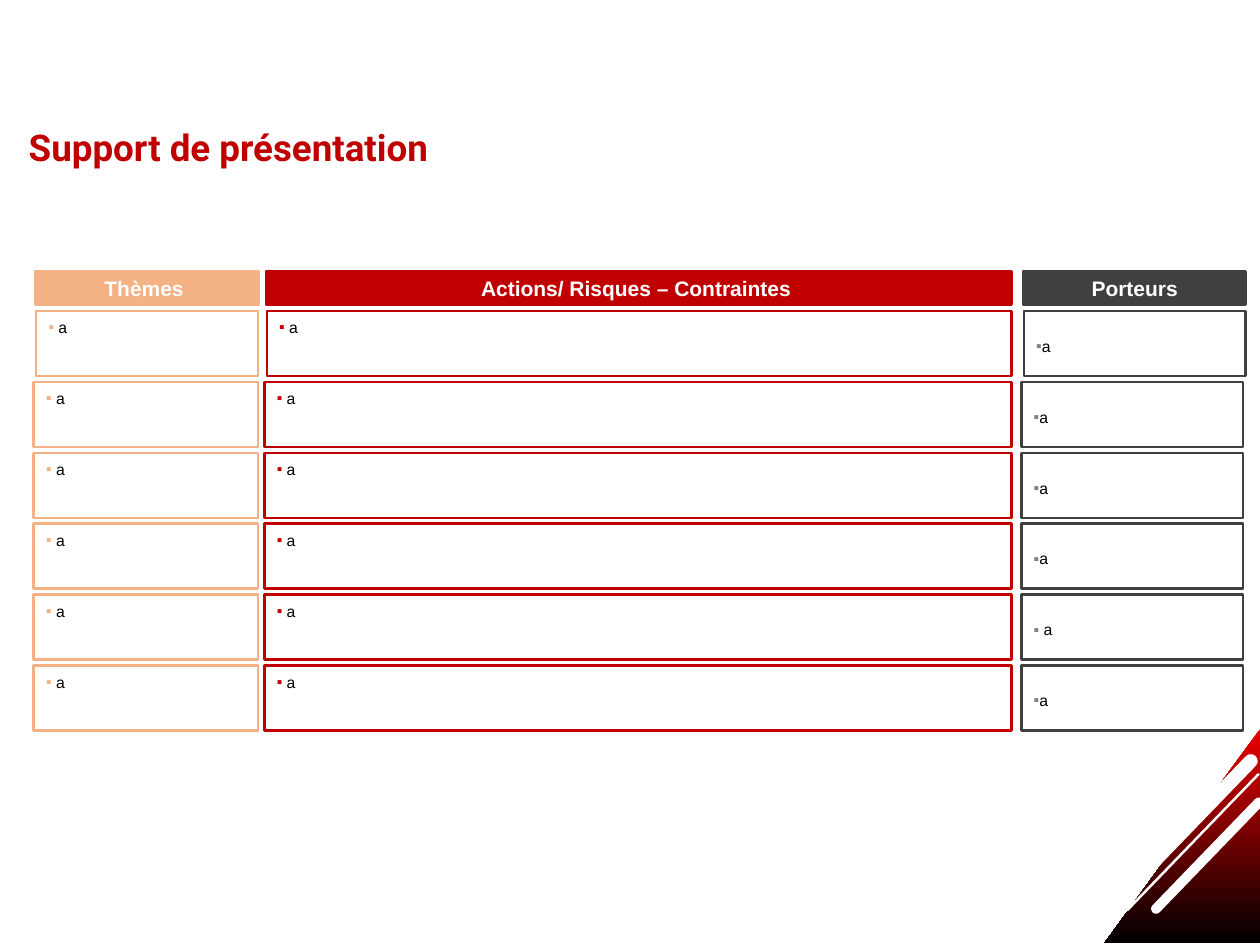
"""Build the action tracking slide with its three columns and corner decoration."""
from lxml.etree import SubElement
from pptx import Presentation
from pptx.dml.color import RGBColor
from pptx.enum.shapes import MSO_SHAPE as Preset
from pptx.enum.text import MSO_ANCHOR as Anchor, PP_ALIGN as Align
from pptx.oxml.ns import qn
from pptx.util import Cm, Pt


def color(value):
    return RGBColor.from_string(value)


def add_box(left, top, width, height, fill, line, line_width):
    shape = slide.shapes.add_shape(
        Preset.ROUNDED_RECTANGLE, Cm(left), Cm(top), Cm(width), Cm(height))
    shape.adjustments[0] = 0
    shape.shadow.inherit = False
    shape.fill.solid()
    shape.fill.fore_color.rgb = color(fill)
    shape.line.color.rgb = color(line)
    shape.line.width = Pt(line_width)
    SubElement(shape._element.spPr.find(qn("a:ln")), qn("a:round"))
    shape.text_frame.word_wrap = True
    return shape


presentation = Presentation()
presentation.slide_width, presentation.slide_height = Cm(25.4), Cm(19.05)
slide = presentation.slides.add_slide(presentation.slide_layouts[6])

decoration = slide.shapes.add_group_shape()
triangle = decoration.shapes.add_shape(
    Preset.RIGHT_TRIANGLE, Cm(22.26), Cm(14.7), Cm(3.14), Cm(4.32))
triangle.shadow.inherit = False
triangle._element.spPr.find(qn("a:xfrm")).set("flipH", "1")
triangle.fill.gradient()
triangle.fill.gradient_angle = 270
for position, value in enumerate(("EA0000", "000000")):
    stop = triangle.fill.gradient_stops[position]
    stop.color.rgb = color(value)
    stop.position = position
triangle.line.fill.background()

stripes = [(21.5, 16.72, 4.5, 0.28), (22.75, 17.15, 3.18, 0.2), (22.13, 16.95, 3.84, 0.05)]
for left, top, width, height in stripes:
    stripe = decoration.shapes.add_shape(
        Preset.ROUNDED_RECTANGLE, Cm(left), Cm(top), Cm(width), Cm(height))
    stripe.adjustments[0] = 0.5
    stripe.rotation = 314
    stripe.shadow.inherit = False
    stripe.fill.solid()
    stripe.fill.fore_color.rgb = color("FFFFFF")
    stripe.line.fill.background()

columns = [
    ("Thèmes ", 0.73, 4.47, "F4B183", "F4B183", Anchor.TOP, 0.05),
    ("Actions/ Risques – Contraintes ", 5.38, 15.01, "C00000", "C00000", Anchor.TOP, 0.05),
    ("Porteurs", 20.64, 4.47, "404040", "808080", Anchor.MIDDLE, 0),
]
row_count, first_top, row_pitch, row_height = 6, 6.27, 1.43, 1.31
shift = 0.05
for heading, left, width, accent, bullet_color, anchor, widening in columns:
    header = add_box(left, 5.47, width, 0.67, accent, accent, 2)
    header.text_frame.vertical_anchor = Anchor.MIDDLE
    paragraph = header.text_frame.paragraphs[0]
    paragraph.alignment = Align.CENTER
    run = paragraph.add_run()
    run.text = heading
    run.font.name, run.font.size, run.font.bold = "Arial", Pt(12), True
    run.font.color.rgb = color("FFFFFF")

    for row in range(row_count):
        offset, extra = (shift, widening) if row else (0, 0)
        cell = add_box(left - offset, first_top + row * row_pitch, width + extra,
                       row_height, "FFFFFF", accent, 1.5)
        cell.text_frame.vertical_anchor = anchor
        cell.text_frame.margin_top = Cm(0.22 if anchor == Anchor.MIDDLE else 0.14)
        paragraph = cell.text_frame.paragraphs[0]
        paragraph.alignment = Align.LEFT
        properties = paragraph._p.get_or_add_pPr()
        bullet_fill = SubElement(properties, qn("a:buClr"))
        SubElement(bullet_fill, qn("a:srgbClr"), val=bullet_color)
        SubElement(properties, qn("a:buFont"), typeface="Arial")
        SubElement(properties, qn("a:buChar"), char="▪")
        run = paragraph.add_run()
        run.text = "a" if heading == "Porteurs" and row != 4 else " a"
        run.font.name, run.font.size = "Arial", Pt(9)
        run.font.color.rgb = color("000000")

title = slide.shapes.add_textbox(Cm(0.33), Cm(2.08), Cm(22.68), Cm(1.45))
title.text_frame.word_wrap = True
title.text_frame.vertical_anchor = Anchor.BOTTOM
run = title.text_frame.paragraphs[0].add_run()
run.text = "Support de présentation"
run.font.name, run.font.size, run.font.bold = "Roboto", Pt(21), True
run.font.color.rgb = color("C00000")

presentation.save("out.pptx")
